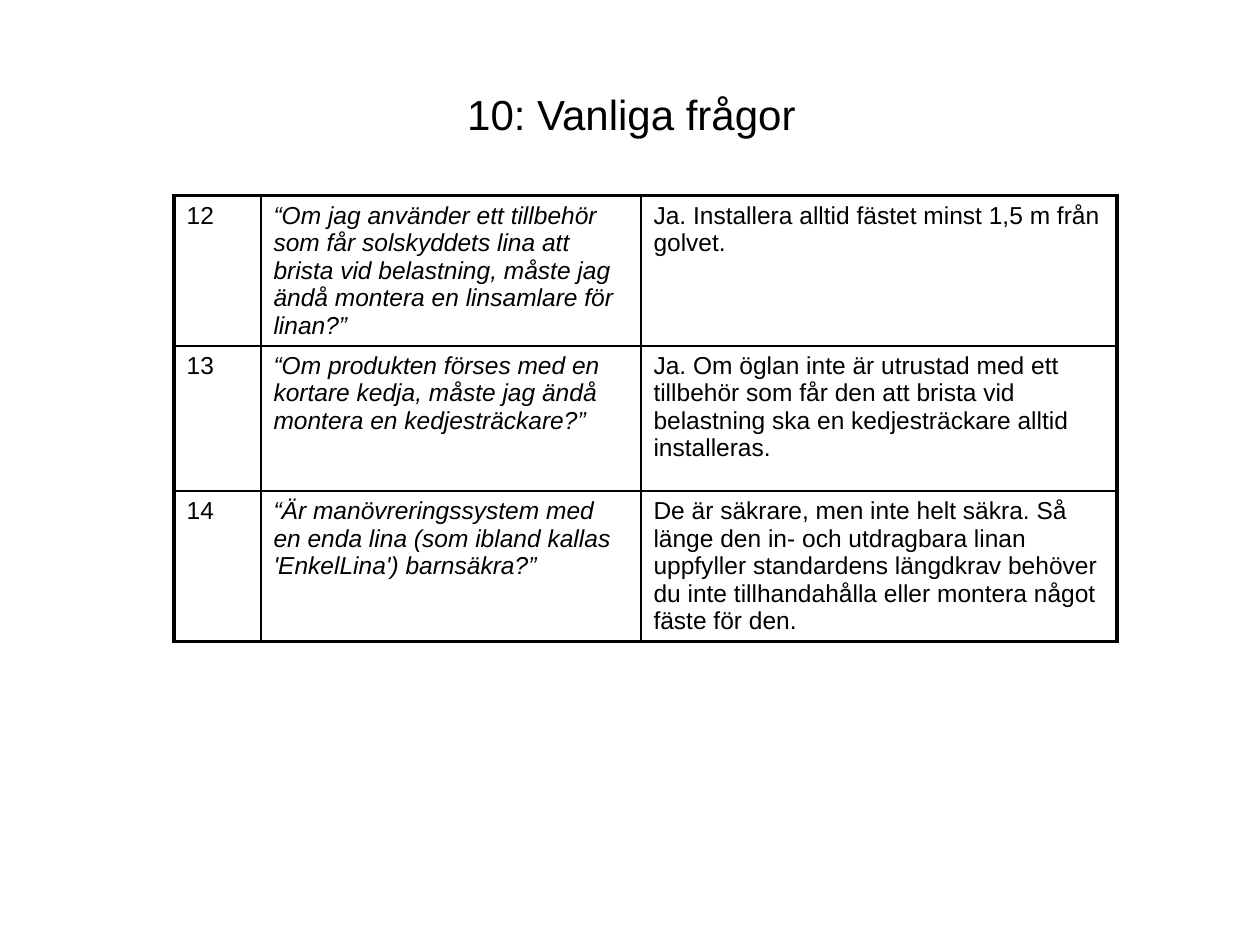
"""Build a slide with a table of frequently asked questions about blind safety."""
import dataclasses

import pptx
import pptx.dml.color
import pptx.enum.text
import pptx.oxml
import pptx.oxml.ns
import pptx.util
from pptx.util import Cm, Pt


@dataclasses.dataclass(frozen=True)
class Theme:
    font: str = "Arial"
    ink: str = "000000"
    paper: str = "FFFFFF"
    title_size: float = 24
    body_size: float = 14
    outer_rule: float = 2.25
    inner_rule: float = 1


theme = Theme()


def add_text(paragraph, text, size, italic=False):
    run = paragraph.add_run()
    run.text = text
    run.font.name = theme.font
    run.font.size = Pt(size)
    run.font.italic = italic
    run.font.color.rgb = pptx.dml.color.RGBColor.from_string(theme.ink)


def set_borders(cell, outer_sides):
    properties = cell._tc.get_or_add_tcPr()
    for position, side in enumerate("LRTB"):
        width = theme.outer_rule if side in outer_sides else theme.inner_rule
        border = pptx.oxml.parse_xml(
            f'<a:ln{side} {pptx.oxml.ns.nsdecls("a")} w="{Pt(width)}">'
            f'<a:solidFill><a:srgbClr val="{theme.ink}"/></a:solidFill></a:ln{side}>'
        )
        properties.insert(position, border)


questions = [
    ("12",
     "“Om jag använder ett tillbehör som får solskyddets lina att brista vid "
     "belastning, måste jag ändå montera en linsamlare för linan?”",
     "Ja. Installera alltid fästet minst 1,5 m från golvet."),
    ("13",
     "“Om produkten förses med en kortare kedja, måste jag ändå montera en "
     "kedjesträckare?”",
     "Ja. Om öglan inte är utrustad med ett tillbehör som får den att brista vid "
     "belastning ska en kedjesträckare alltid installeras."),
    ("14",
     "“Är manövreringssystem med en enda lina (som ibland kallas 'EnkelLina') "
     "barnsäkra?”",
     "De är säkrare, men inte helt säkra. Så länge den in- och utdragbara linan "
     "uppfyller standardens längdkrav behöver du inte tillhandahålla eller montera "
     "något fäste för den."),
]
column_widths = [Cm(1.75), Cm(7.66), Cm(9.6)]
row_height = Cm(2.93)

presentation = pptx.Presentation()
presentation.slide_width = Cm(25.4)
presentation.slide_height = Cm(19.05)
slide = presentation.slides.add_slide(presentation.slide_layouts[5])
slide.background.fill.solid()
slide.background.fill.fore_color.rgb = pptx.dml.color.RGBColor.from_string(theme.paper)

heading = slide.shapes.title
heading.left, heading.top = Cm(1.3), Cm(0.71)
heading.width, heading.height = Cm(22.86), Cm(3.18)
heading.text_frame.vertical_anchor = pptx.enum.text.MSO_ANCHOR.MIDDLE
heading_line = heading.text_frame.paragraphs[0]
heading_line.alignment = pptx.enum.text.PP_ALIGN.CENTER
add_text(heading_line, "10: Vanliga frågor", theme.title_size)

faq = slide.shapes.add_table(
    len(questions), len(column_widths), Cm(3.51), Cm(3.94),
    sum(column_widths), row_height * len(questions),
).table
faq.first_row = False
faq.horz_banding = False
for column, width in zip(faq.columns, column_widths):
    column.width = width

last_row, last_column = len(questions) - 1, len(column_widths) - 1
for row_index, entry in enumerate(questions):
    faq.rows[row_index].height = row_height
    for column_index, text in enumerate(entry):
        cell = faq.cell(row_index, column_index)
        cell.fill.background()
        outer_sides = (
            "L" * (column_index == 0) + "R" * (column_index == last_column)
            + "T" * (row_index == 0) + "B" * (row_index == last_row)
        )
        set_borders(cell, outer_sides)
        add_text(cell.text_frame.paragraphs[0], text, theme.body_size,
                 italic=column_index == 1)

presentation.save("out.pptx")
